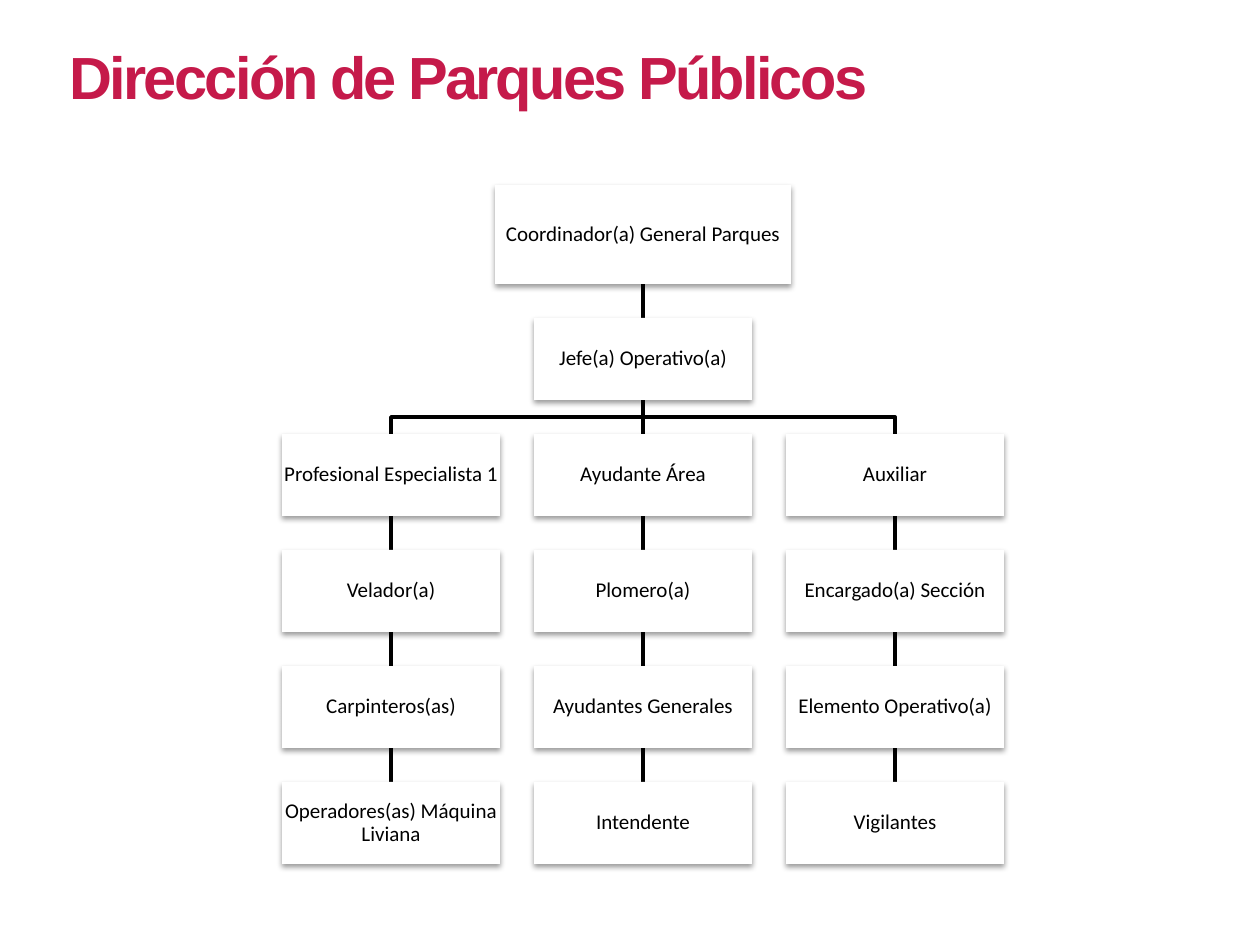
from dataclasses import dataclass
from itertools import pairwise

from lxml.etree import SubElement
from pptx import Presentation
from pptx.dml.color import RGBColor
from pptx.enum.shapes import MSO_CONNECTOR as Connector, MSO_SHAPE as Shape
from pptx.enum.text import MSO_ANCHOR as Anchor, MSO_AUTO_SIZE as AutoSize, PP_ALIGN as Align
from pptx.oxml.ns import qn
from pptx.util import Emu, Pt

PX_PER_INCH = 126
BLACK, WHITE, CRIMSON = "000000", "FFFFFF", "C51A4A"
TITLE_FONT = {"size": Pt(34), "name": "Arial", "bold": True}
POST_FONT = {"size": Pt(12), "name": "Calibri"}
POST_FRAME = {"word_wrap": True, "vertical_anchor": Anchor.MIDDLE}
SHADOW = {"blurRad": "40000", "dist": "20000", "dir": "5400000", "rotWithShape": "0"}

# Grid of the chart, in px
COLUMN_LEFT, COLUMN_STEP = 282, 252
ROW_TOP, ROW_STEP = 318, 116
POST_WIDTH, POST_HEIGHT = 218, 82

BRANCHES = [
    ["Profesional Especialista 1", "Velador(a)", "Carpinteros(as)",
     "Operadores(as) Máquina Liviana"],
    ["Ayudante Área", "Plomero(a)", "Ayudantes Generales", "Intendente"],
    ["Auxiliar", "Encargado(a) Sección", "Elemento Operativo(a)", "Vigilantes"],
]


@dataclass(frozen=True)
class Post:
    label: str
    left: int
    top: int
    width: int = POST_WIDTH
    height: int = POST_HEIGHT

    @property
    def center(self) -> int:
        return self.left + self.width // 2

    @property
    def bottom(self) -> int:
        return self.top + self.height


def px(length: int) -> Emu:
    return Emu(round(length * 914400 / PX_PER_INCH))


def color(value: str) -> RGBColor:
    return RGBColor.from_string(value)


def apply(target, values: dict) -> None:
    for key, value in values.items():
        setattr(target, key, value)


def style_line(line) -> None:
    line.color.rgb = color(BLACK)
    line.width = Pt(2)


def grid_post(label: str, column: int, row: int) -> Post:
    return Post(label, COLUMN_LEFT + column * COLUMN_STEP, ROW_TOP + row * ROW_STEP)


def draw_link(shapes, upper: Post, lower: Post) -> None:
    """Join two posts, with a bend when they are in different columns."""
    if upper.center == lower.center:
        link = shapes.add_connector(Connector.STRAIGHT, px(upper.center), px(upper.bottom),
                                    px(lower.center), px(lower.top))
        style_line(link.line)
        SubElement(link._element.spPr, qn("a:effectLst"))
        return
    middle = (upper.bottom + lower.top) // 2
    outline = shapes.build_freeform(px(upper.center), px(upper.bottom))
    bends = [(upper.center, middle), (lower.center, middle), (lower.center, lower.top)]
    outline.add_line_segments([(px(x), px(y)) for x, y in bends], close=False)
    link = outline.convert_to_shape()
    link.shadow.inherit = False
    link.fill.background()
    style_line(link.line)


def draw_post(shapes, post: Post) -> None:
    box = shapes.add_shape(Shape.RECTANGLE, px(post.left), px(post.top),
                           px(post.width), px(post.height))
    box.fill.solid()
    box.fill.fore_color.rgb = color(WHITE)
    box.line.fill.background()

    # Soft shadow below the box
    box.shadow.inherit = False
    effects = box._element.spPr.find(qn("a:effectLst"))
    shade = SubElement(SubElement(effects, qn("a:outerShdw"), SHADOW),
                       qn("a:srgbClr"), val=BLACK)
    SubElement(shade, qn("a:alpha"), val="38000")

    # Label
    frame = box.text_frame
    margins = {f"margin_{side}": px(1) for side in ("left", "top", "right", "bottom")}
    apply(frame, POST_FRAME | margins)
    label = frame.paragraphs[0]
    label.text = post.label
    apply(label, {"alignment": Align.CENTER, "line_spacing": 0.9})
    space_after = SubElement(label._p.get_or_add_pPr(), qn("a:spcAft"))
    SubElement(space_after, qn("a:spcPct"), val="35000")
    font = label.runs[0].font
    apply(font, POST_FONT)
    font.color.rgb = color(BLACK)


def draw_title(shapes, wording: str) -> None:
    frame = shapes.add_textbox(px(57), px(34), px(982), px(84)).text_frame
    apply(frame, {"word_wrap": True, "auto_size": AutoSize.SHAPE_TO_FIT_TEXT})
    title = frame.paragraphs[0].add_run()
    title.text = wording
    apply(title.font, TITLE_FONT)
    title.font.color.rgb = color(CRIMSON)
    title._r.get_or_add_rPr().set("spc", "-150")


def main() -> None:
    deck = Presentation()
    apply(deck, {"slide_width": px(1260), "slide_height": px(945)})
    shapes = deck.slides.add_slide(deck.slide_layouts[6]).shapes
    draw_title(shapes, "Dirección de Parques Públicos")

    # Posts by rank
    coordinator = Post("Coordinador(a) General Parques", 495, 185, 296, 99)
    chief = grid_post("Jefe(a) Operativo(a)", 1, 0)
    branches = [[grid_post(label, column, row) for row, label in enumerate(labels, 1)]
                for column, labels in enumerate(BRANCHES)]

    # Links lie behind the boxes
    links = [(coordinator, chief)]
    for branch in branches:
        links += pairwise([chief, *branch])
    for upper, lower in links:
        draw_link(shapes, upper, lower)
    for post in [coordinator, chief, *sum(branches, [])]:
        draw_post(shapes, post)

    deck.save("out.pptx")


if __name__ == "__main__":
    main()
